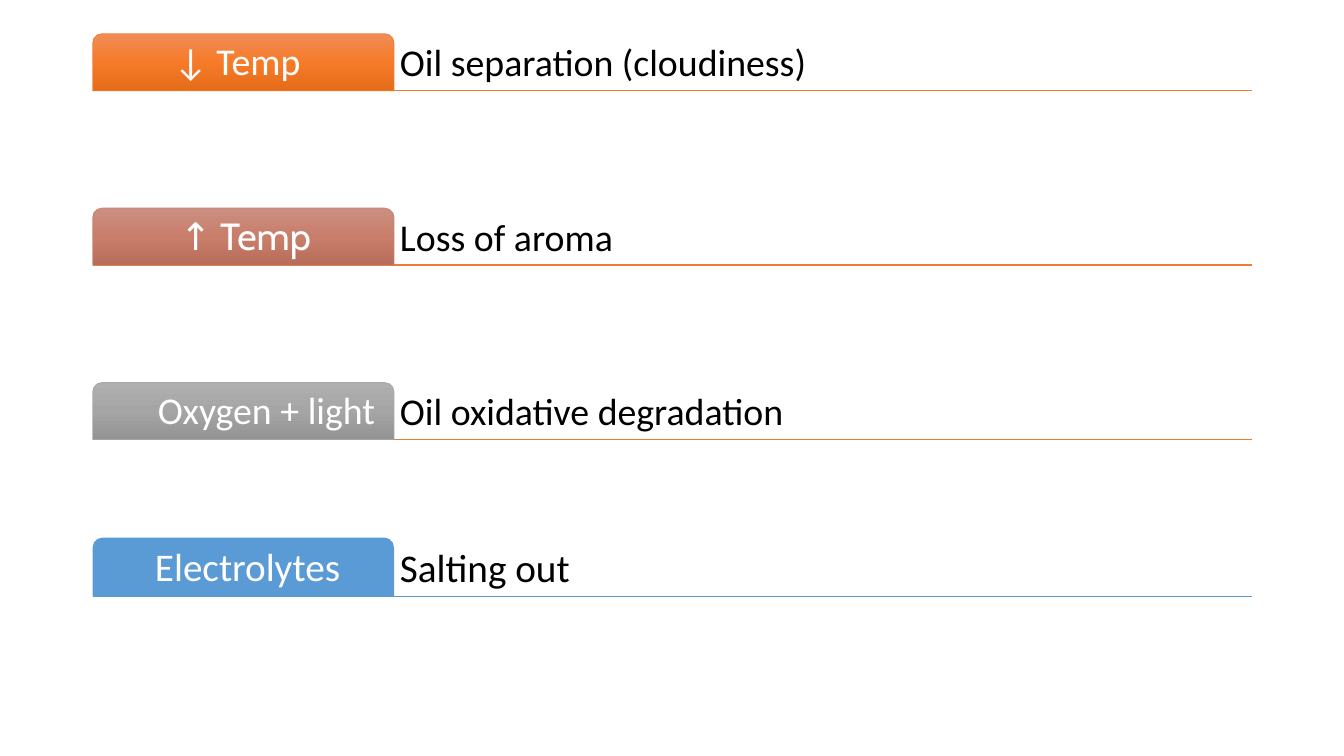
from copy import deepcopy

from lxml.etree import SubElement
from pptx import Presentation
from pptx.dml.color import RGBColor
from pptx.enum.shapes import MSO_CONNECTOR, MSO_SHAPE
from pptx.enum.text import MSO_ANCHOR as ANCHOR, PP_ALIGN as ALIGN
from pptx.oxml.ns import qn
from pptx.util import Pt

LEFT, RIGHT = 66.2, 894.2
TAB_WIDTH = 215.3
INSET = 4.2


def rgb(value):
    return RGBColor.from_string(value)


def write(shape, text, *, size, color, font="Calibri", align=ALIGN.LEFT,
          anchor=ANCHOR.BOTTOM, shift=0):
    """Fill a shape with one line; shift moves centred text sideways."""
    frame = shape.text_frame
    frame.word_wrap = True
    frame.vertical_anchor = anchor
    frame.margin_top = frame.margin_bottom = Pt(INSET)
    frame.margin_left = Pt(INSET + max(2 * shift, 0))
    frame.margin_right = Pt(INSET + max(-2 * shift, 0))
    paragraph = frame.paragraphs[0]
    paragraph.alignment = align
    paragraph.line_spacing = 0.9
    run = paragraph.add_run()
    run.text = text
    run.font.name = font
    run.font.size = Pt(size)
    run.font.color.rgb = rgb(color)


presentation = Presentation()
presentation.slide_width, presentation.slide_height = Pt(960), Pt(540)
slide = presentation.slides.add_slide(presentation.slide_layouts[6])

# Cause, effect, top, height, text size, cause font, cause shift,
# tab fill colours, tab outline, rule colour
rows = [
    ("↓ Temp", "Oil separation (cloudiness)", 24, 40.8, 27, "Calibri", -4.5,
     ["F18C57", "F67B28", "E56C19"], "ED7D31", "ED7D31"),
    ("↑ Temp", "Loss of aroma", 148.6, 40.8, 27, "Cabin", 1.5,
     ["CB8F81", "C97E6B", "B76D5B"], "C48170", "ED7D31"),
    ("Oxygen + light", "Oil oxidative degradation", 273.2, 40.8, 27, "Calibri", 16.5,
     ["AFAFAF", "A5A5A5", "939393"], "A5A5A5", "ED7D31"),
    ("Electrolytes", "Salting out", 384, 42, 28, "Calibri", 3,
     ["5B9BD5"], None, "5B9BD5"),
]

for cause, effect, top, height, size, font, shift, fills, outline, rule_color in rows:
    # Rule under the row
    bottom = Pt(top + height)
    rule = slide.shapes.add_connector(MSO_CONNECTOR.STRAIGHT, Pt(LEFT), bottom, Pt(RIGHT), bottom)
    rule.line.color.rgb = rgb(rule_color)
    rule.line.width = Pt(1)
    SubElement(rule._element.spPr, qn("a:effectLst"))

    # Effect text
    tab_right = LEFT + TAB_WIDTH
    effect_box = slide.shapes.add_textbox(Pt(tab_right), Pt(top), Pt(RIGHT - tab_right), Pt(height))
    write(effect_box, effect, size=size, color="000000")

    # Cause tab
    tab = slide.shapes.add_shape(MSO_SHAPE.ROUND_2_SAME_RECTANGLE,
                                 Pt(LEFT), Pt(top), Pt(TAB_WIDTH), Pt(height))
    tab.shadow.inherit = False
    tab.adjustments[0] = 0.167
    if len(fills) == 1:
        tab.fill.solid()
        tab.fill.fore_color.rgb = rgb(fills[0])
    else:
        tab.fill.gradient()
        tab.fill.gradient_angle = 270
        stop_list = tab._element.spPr.find(qn("a:gradFill")).find(qn("a:gsLst"))
        middle = deepcopy(stop_list[0])
        middle.set("pos", "50000")
        stop_list.insert(1, middle)
        for stop, color in zip(tab.fill.gradient_stops, fills):
            stop.color.rgb = rgb(color)
    if outline:
        tab.line.color.rgb = rgb(outline)
        tab.line.width = Pt(0.5)
    else:
        tab.line.fill.background()
    write(tab, cause, size=size, color="FFFFFF", font=font, align=ALIGN.CENTER,
          anchor=ANCHOR.MIDDLE, shift=shift)

presentation.save("out.pptx")
